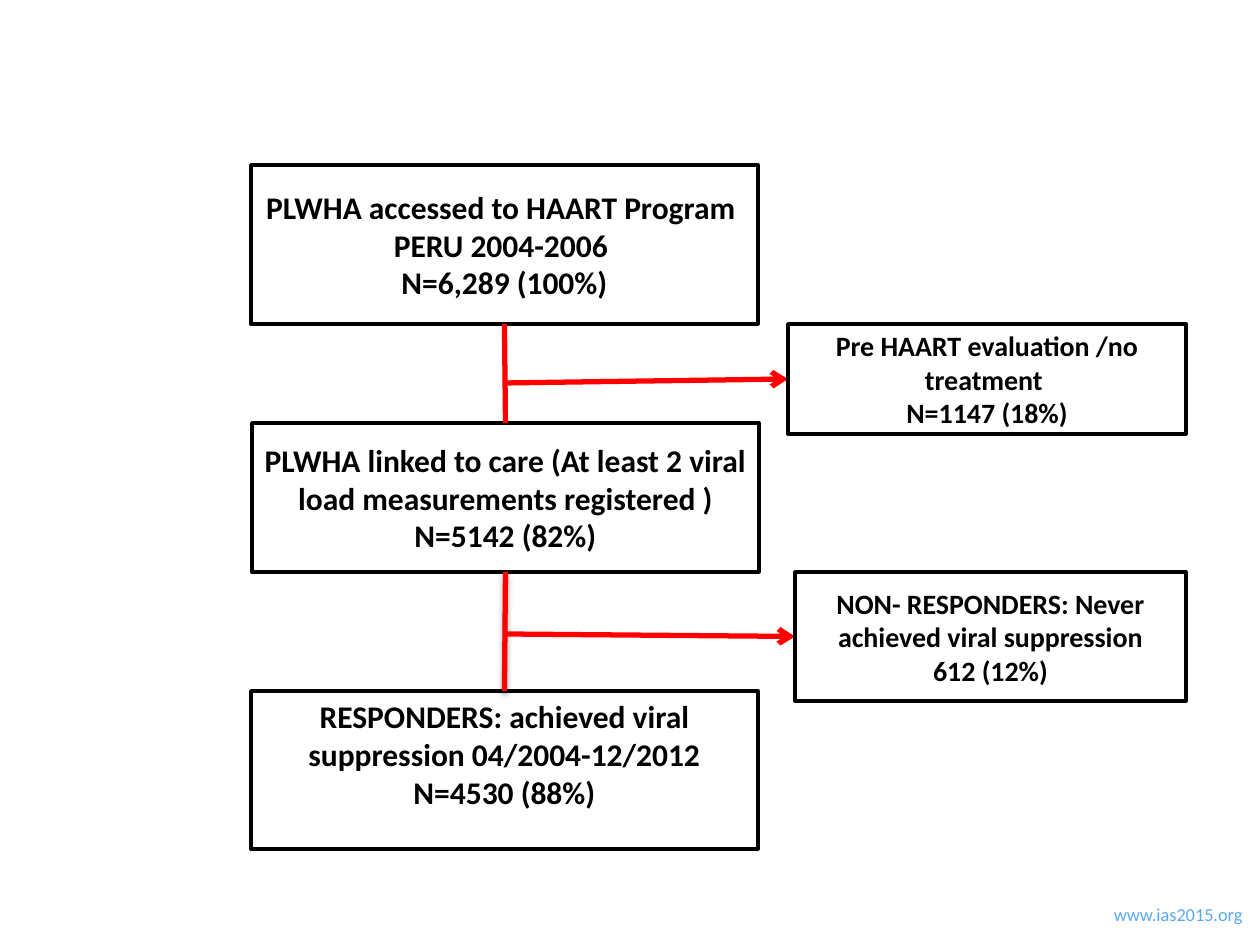
from lxml.etree import SubElement
from pptx import Presentation
from pptx.dml.color import RGBColor
from pptx.enum.shapes import MSO_CONNECTOR, MSO_SHAPE
from pptx.enum.text import MSO_ANCHOR, PP_ALIGN
from pptx.oxml.ns import qn
from pptx.util import Pt

PX = 914400 // 126
FONT = "Calibri"
COLORS = {"box": "FFFFFF", "ink": "000000", "flow": "FF0000", "footer": "59AAF2"}
TOP, BOTTOM, LEFT = 0, 2, 1

# Main stages: box, anchor, lines
STAGES = [
    ((251, 165, 507, 159), MSO_ANCHOR.MIDDLE,
     ["PLWHA accessed to HAART Program ", "PERU 2004-2006 ", "N=6,289 (100%)"]),
    ((252, 423, 507, 149), MSO_ANCHOR.MIDDLE,
     ["PLWHA linked to care (At least 2 viral load measurements registered )",
      "N=5142 (82%)"]),
    ((251, 691, 507, 158), MSO_ANCHOR.TOP,
     ["RESPONDERS: achieved viral suppression 04/2004-12/2012", "N=4530 (88%)"]),
]
# Patients leaving after each stage: box, lines, start of the branch
EXITS = [
    ((788, 324, 398, 110),
     ["Pre HAART evaluation /no treatment ", "N=1147 (18%)"], (505, 383)),
    ((795, 572, 391, 129),
     ["NON- RESPONDERS: Never achieved viral suppression", "612 (12%)"], (505, 634)),
]


def color(name):
    return RGBColor.from_string(COLORS[name])


def emu(*lengths):
    return [length * PX for length in lengths]


def write_lines(shape, lines, size, ink, align, bold=False):
    frame = shape.text_frame
    frame.word_wrap = True
    frame.text = "\n".join(lines)
    for para in frame.paragraphs:
        para.alignment = align
        para.font.name = FONT
        para.font.size = Pt(size)
        para.font.bold = bold
        para.font.color.rgb = color(ink)


def add_box(page, box, lines, size, anchor=MSO_ANCHOR.MIDDLE):
    shape = page.shapes.add_shape(MSO_SHAPE.RECTANGLE, *emu(*box))
    shape.shadow.inherit = False
    shape.fill.solid()
    shape.fill.fore_color.rgb = color("box")
    shape.line.color.rgb = color("ink")
    shape.line.width = Pt(2)
    shape.text_frame.vertical_anchor = anchor
    write_lines(shape, lines, size, "ink", PP_ALIGN.CENTER, bold=True)
    return shape


def add_flow(page, start=(0, 0), arrow=False):
    line = page.shapes.add_connector(MSO_CONNECTOR.STRAIGHT, *emu(*start, *start))
    line.line.color.rgb = color("flow")
    line.line.width = Pt(3)
    if arrow:
        SubElement(line.line._get_or_add_ln(), qn("a:tailEnd"), type="arrow")
    SubElement(line._element.spPr, qn("a:effectLst"))
    return line


def add_soft_shadow(line):
    effects = line._element.spPr.find(qn("a:effectLst"))
    shadow = SubElement(effects, qn("a:outerShdw"), blurRad=str(Pt(3.1)),
                        dist=str(Pt(1.8)), dir="5400000", rotWithShape="0")
    tint = SubElement(shadow, qn("a:srgbClr"), val=COLORS["ink"])
    SubElement(tint, qn("a:alpha"), val="35000")


def add_flowchart(page):
    stages = [add_box(page, box, lines, 18, anchor) for box, anchor, lines in STAGES]
    # Spine between stages
    for upper, lower in zip(stages, stages[1:]):
        spine = add_flow(page)
        spine.begin_connect(upper, BOTTOM)
        spine.end_connect(lower, TOP)
    add_soft_shadow(spine)
    # Side exits
    for box, lines, start in EXITS:
        branch = add_flow(page, start, arrow=True)
        branch.end_connect(add_box(page, box, lines, 16), LEFT)


def add_footer(page, box):
    footer = page.shapes.add_textbox(*emu(*box))
    write_lines(footer, ["www.ias2015.org"], 10.5, "footer", PP_ALIGN.RIGHT)


def main():
    deck = Presentation()
    deck.slide_width, deck.slide_height = emu(1260, 945)
    page = deck.slides.add_slide(deck.slide_layouts[6])
    add_footer(page, (961, 897, 294, 50))
    add_flowchart(page)
    deck.save("out.pptx")


if __name__ == "__main__":
    main()
